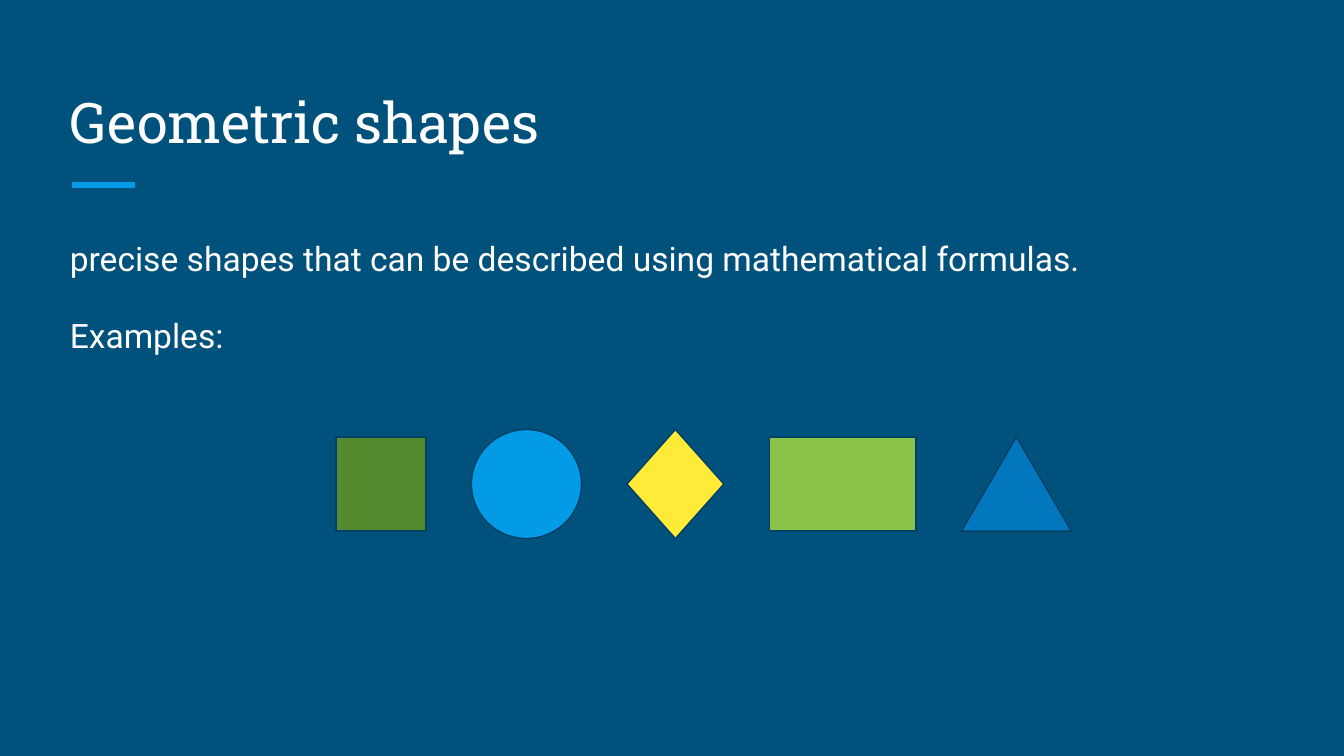
from dataclasses import dataclass

import pptx
import pptx.dml.color
import pptx.enum.shapes
import pptx.enum.text
import pptx.oxml.ns
import pptx.slide
import pptx.util
from lxml import etree

Cm = pptx.util.Cm
Pt = pptx.util.Pt
RGBColor = pptx.dml.color.RGBColor
Kind = pptx.enum.shapes.MSO_SHAPE
Anchor = pptx.enum.text.MSO_ANCHOR

NAVY = RGBColor(0x00, 0x51, 0x7C)
EDGE = RGBColor(0x00, 0x40, 0x65)
WHITE = RGBColor(0xFF, 0xFF, 0xFF)
SKY = RGBColor(0x03, 0x9B, 0xE5)
BLUE = RGBColor(0x02, 0x77, 0xBD)
YELLOW = RGBColor(0xFF, 0xEB, 0x38)
GREEN = RGBColor(0x55, 0x8B, 0x2F)
LIME = RGBColor(0x8B, 0xC3, 0x4A)

# Row of figures, in cm
LEFT = 6.35
MIDDLE = 9.15
GAP = 0.86


@dataclass
class Figure:
    kind: Kind
    width: float
    height: float
    fill: RGBColor


@dataclass
class Block:
    lines: list[str]
    top: float
    height: float
    font: str
    size: int
    anchor: Anchor
    space: float = 1.0
    after: int = 0


FIGURES = [
    Figure(Kind.RECTANGLE, 1.7, 1.78, GREEN),
    Figure(Kind.OVAL, 2.08, 2.06, SKY),
    Figure(Kind.DIAMOND, 1.83, 2.06, YELLOW),
    Figure(Kind.RECTANGLE, 2.77, 1.78, LIME),
    Figure(Kind.ISOSCELES_TRIANGLE, 2.08, 1.78, BLUE),
]

BLOCKS = [
    Block(["Geometric shapes"], 1.27, 1.91, "Roboto Slab", 30, Anchor.BOTTOM),
    Block(
        ["precise shapes that can be described using mathematical formulas.",
         "Examples:"],
        4.14, 8.56, "Roboto", 18, Anchor.TOP, 1.15, 16,
    ),
]


def add_block(slide: pptx.slide.Slide, block: Block) -> None:
    box = slide.shapes.add_textbox(
        Cm(1.07), Cm(block.top), Cm(23.24), Cm(block.height))
    frame = box.text_frame
    frame.word_wrap = True
    frame.vertical_anchor = block.anchor
    frame.margin_left = frame.margin_right = Cm(0.25)
    frame.margin_top = frame.margin_bottom = Cm(0.25)
    frame.text = "\n".join(block.lines)
    for para in frame.paragraphs:
        para.line_spacing = block.space
        para.space_after = Pt(block.after)
        for run in para.runs:
            run.font.name = block.font
            run.font.size = Pt(block.size)
            run.font.color.rgb = WHITE


def add_rule(slide: pptx.slide.Slide) -> None:
    rule = slide.shapes.add_connector(
        pptx.enum.shapes.MSO_CONNECTOR.STRAIGHT,
        Cm(1.36), Cm(3.5), Cm(2.55), Cm(3.5))
    rule.line.color.rgb = SKY
    rule.line.width = Pt(3)
    etree.SubElement(rule._element.spPr, pptx.oxml.ns.qn("a:effectLst"))


def add_figure(slide: pptx.slide.Slide, figure: Figure, left: float) -> None:
    shape = slide.shapes.add_shape(
        figure.kind, Cm(left), Cm(MIDDLE - figure.height / 2),
        Cm(figure.width), Cm(figure.height))
    shape.shadow.inherit = False
    shape.fill.solid()
    shape.fill.fore_color.rgb = figure.fill
    shape.line.color.rgb = EDGE
    shape.line.width = Pt(0.75)


def main() -> None:
    deck = pptx.Presentation()
    deck.slide_width = Cm(25.4)
    deck.slide_height = Cm(14.29)
    slide = deck.slides.add_slide(deck.slide_layouts[6])
    slide.background.fill.solid()
    slide.background.fill.fore_color.rgb = NAVY

    # Title, accent rule and body
    add_rule(slide)
    for block in BLOCKS:
        add_block(slide, block)

    # Example figures, evenly spaced on one middle line
    left = LEFT
    for figure in FIGURES:
        add_figure(slide, figure, left)
        left += figure.width + GAP

    deck.save("out.pptx")


if __name__ == "__main__":
    main()
